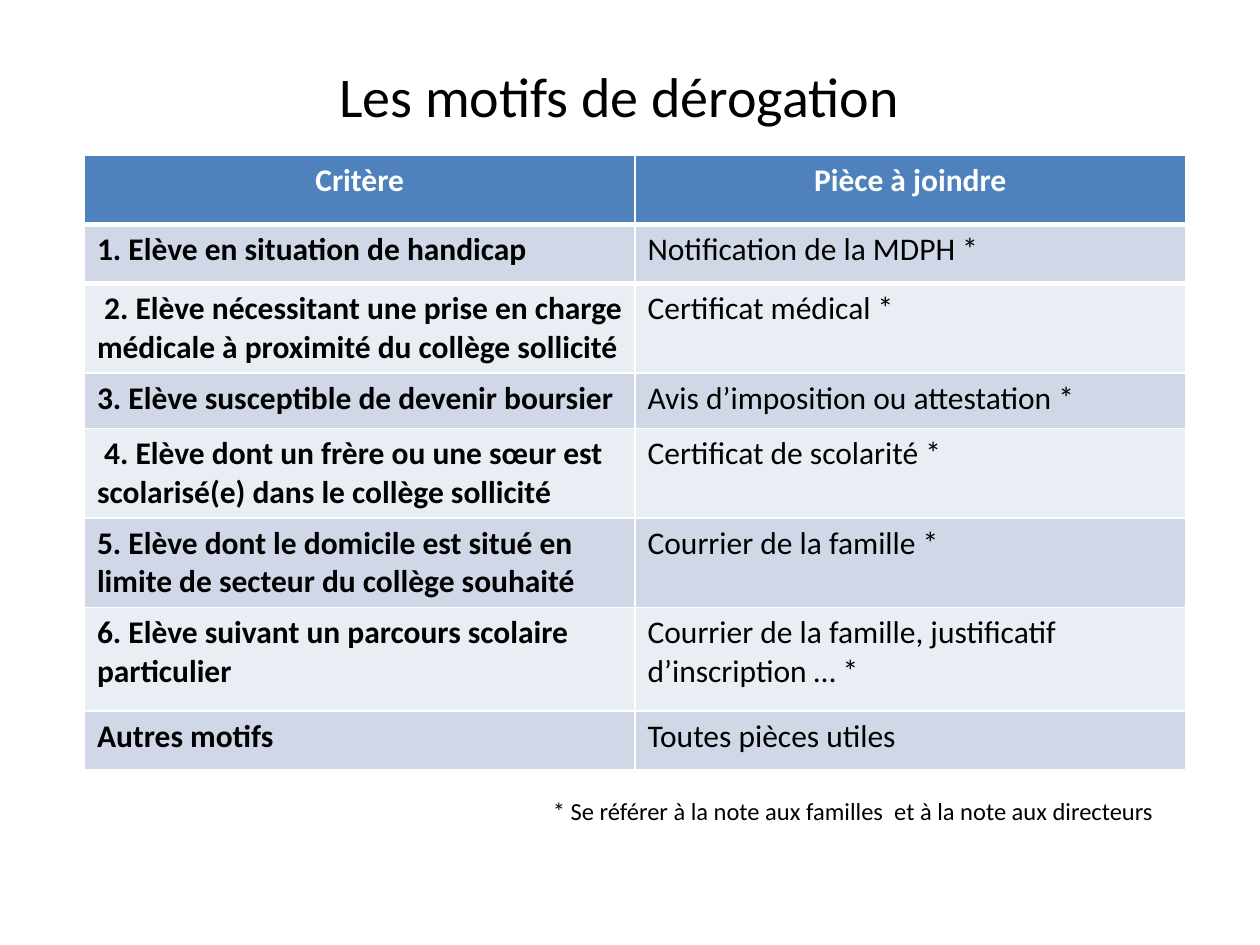
from lxml import etree
from pptx import Presentation
from pptx.dml.color import RGBColor
from pptx.enum import text
from pptx.oxml.ns import qn
from pptx.util import Inches, Pt

BLACK = RGBColor(0x00, 0x00, 0x00)
WHITE = RGBColor(0xFF, 0xFF, 0xFF)
HEADER = RGBColor(0x4F, 0x81, 0xBD)
BANDS = [RGBColor(0xD0, 0xD8, 0xE8), RGBColor(0xE9, 0xED, 0xF4)]

# Some criteria begin with a no-break space.
ROWS = [
    ("Critère", "Pièce à joindre"),
    ("1. Elève en situation de handicap", "Notification de la MDPH *"),
    (" 2. Elève nécessitant une prise en charge médicale à proximité du collège sollicité",
     "Certificat médical *"),
    ("3. Elève susceptible de devenir boursier", "Avis d’imposition ou attestation *"),
    (" 4. Elève dont un frère ou une sœur est scolarisé(e) dans le collège sollicité",
     "Certificat de scolarité *"),
    ("5. Elève dont le domicile est situé en limite de secteur du collège souhaité",
     "Courrier de la famille *"),
    ("6. Elève suivant un parcours scolaire particulier",
     "Courrier de la famille, justificatif d’inscription … *"),
    ("Autres motifs", "Toutes pièces utiles"),
]
ROW_HEIGHTS = [0.55, 0.47, 0.71, 0.44, 0.71, 0.71, 0.82, 0.47]
COLUMN_WIDTH = 4.37


def write(tf, content, size, color=BLACK, bold=False, align=text.PP_ALIGN.LEFT):
    p = tf.paragraphs[0]
    p.alignment = align
    r = p.add_run()
    r.text = content
    for name, value in {"name": "Calibri", "size": Pt(size), "bold": bold}.items():
        setattr(r.font, name, value)
    r.font.color.rgb = color
    return p


def add_title(s, content):
    sp = s.shapes.title
    place = {"left": 1.85, "top": 0.44, "width": 6.13, "height": 0.63}
    for name, value in place.items():
        setattr(sp, name, Inches(value))
    tf = sp.text_frame
    tf.vertical_anchor = text.MSO_ANCHOR.MIDDLE
    p = write(tf, content, 32, align=text.PP_ALIGN.CENTER)
    p.space_before = Pt(7)


def set_border(cell, side, width):
    """Draw a white line on one side (L, R, T or B); lines go before the fill."""
    tcPr = cell._tc.get_or_add_tcPr()
    ln = etree.Element(qn(f"a:ln{side}"), w=str(Pt(width)))
    fill = etree.SubElement(ln, qn("a:solidFill"))
    etree.SubElement(fill, qn("a:srgbClr"), val=str(WHITE))
    tcPr.insert(0, ln)


def add_criteria_table(s):
    table = s.shapes.add_table(
        len(ROWS), 2, Inches(0.67), Inches(1.23),
        Inches(2 * COLUMN_WIDTH), Inches(sum(ROW_HEIGHTS))).table
    for column in table.columns:
        column.width = Inches(COLUMN_WIDTH)
    for i, (row, height) in enumerate(zip(ROWS, ROW_HEIGHTS)):
        table.rows[i].height = Inches(height)
        header = i == 0
        for j, content in enumerate(row):
            cell = table.cell(i, j)
            cell.margin_right = Inches(0.05 if not header else 0.1)
            cell.fill.solid()
            cell.fill.fore_color.rgb = HEADER if header else BANDS[(i - 1) % 2]
            if i < 2:
                set_border(cell, "B" if header else "T", 3)
            write(cell.text_frame, content, 18,
                  color=WHITE if header else BLACK,
                  bold=header or j == 0,
                  align=text.PP_ALIGN.CENTER if header else text.PP_ALIGN.LEFT)


def add_footnote(s, content):
    sp = s.shapes.add_textbox(Inches(4.29), Inches(6.27), Inches(5.04), Inches(0.34))
    tf = sp.text_frame
    tf.word_wrap = True
    tf.auto_size = text.MSO_AUTO_SIZE.SHAPE_TO_FIT_TEXT
    write(tf, content, 14)


def main():
    prs = Presentation()
    prs.slide_width, prs.slide_height = Inches(10), Inches(7.5)
    s = prs.slides.add_slide(prs.slide_layouts[5])
    add_title(s, "Les motifs de dérogation")
    add_criteria_table(s)
    add_footnote(s, "* Se référer à la note aux familles  et à la note aux directeurs")
    prs.save("out.pptx")


if __name__ == "__main__":
    main()
